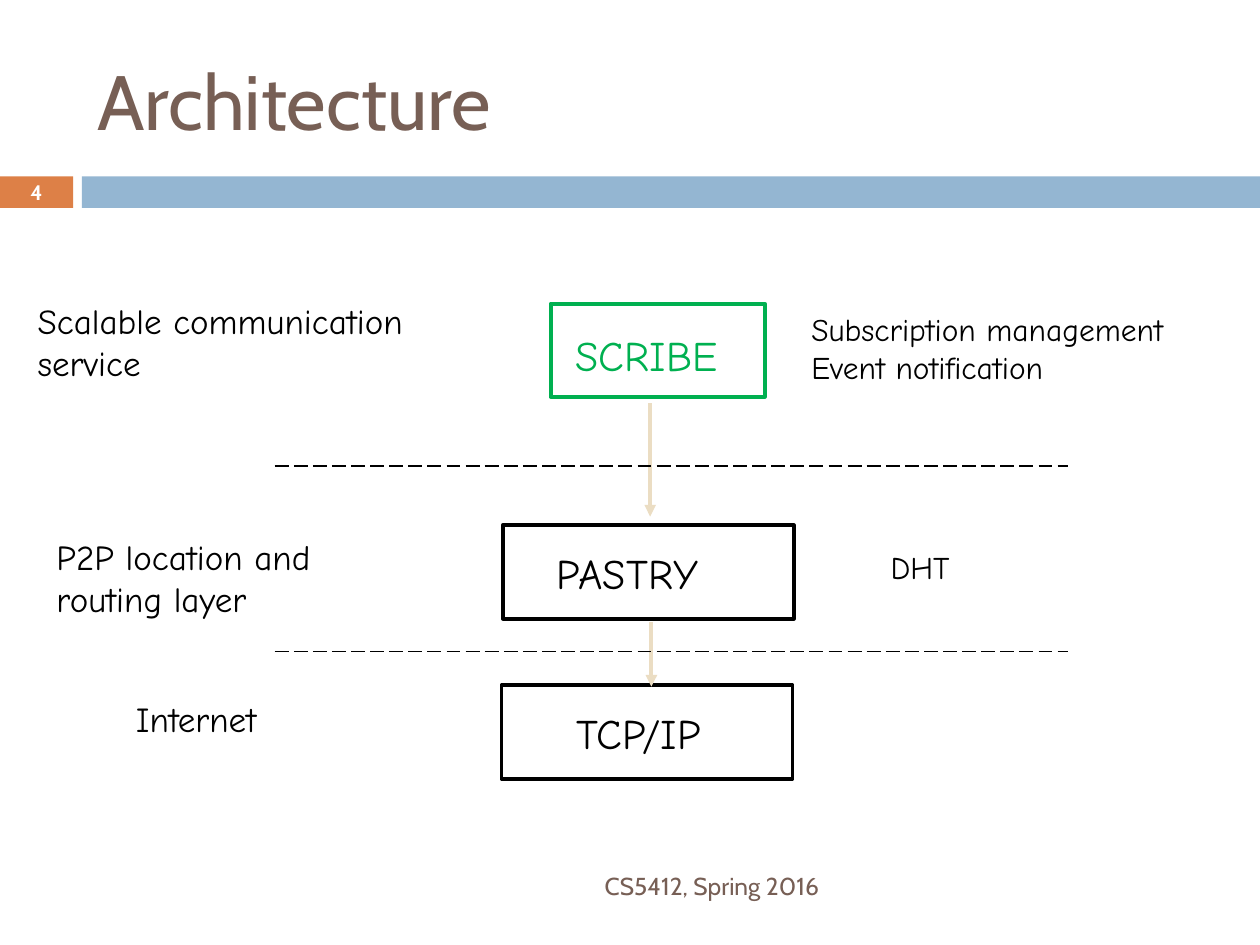
from pptx import Presentation
from pptx.dml.color import RGBColor
from pptx.enum.dml import MSO_LINE
from pptx.enum.shapes import MSO_CONNECTOR, MSO_SHAPE
from pptx.enum.text import MSO_ANCHOR, PP_ALIGN
from pptx.oxml.ns import qn
from pptx.util import Inches, Pt
from lxml.etree import SubElement

THEME = {
    "head": "Cabin", "body": "Comic Neue",
    "brown": "775F55", "orange": "DD8047", "blue": "94B6D2",
    "green": "00B050", "sand": "EBDDC3", "black": "000000", "white": "FFFFFF",
    "title": 44, "layer": 24, "role": 20, "note": 18, "foot": 14, "number": 12,
    "thick": 2.25, "thin": 1,
}

TITLE = ("Architecture", (0.67, 0.25, 8.92, 1.08))
BANDS = [((0, 1.4, 0.58, 0.25), "orange"), ((0.65, 1.4, 9.35, 0.25), "blue")]
NUMBER = ("4", (0, 1.39, 0.58, 0.27))
FOOTER = ("CS5412, Spring 2016", (0.67, 6.83, 5.93, 0.4))
LAYERS = [
    ("SCRIBE", (4.37, 2.41, 1.7, 0.74), (4.47, 2.57, 1.53, 0.5), "green"),
    ("PASTRY", (3.99, 4.17, 2.31, 0.74), (4.32, 4.3, 1.5, 0.5), "black"),
    ("TCP/IP", (3.98, 5.44, 2.31, 0.74), (4.48, 5.57, 1.33, 0.5), "black"),
]
LABELS = [
    ("Scalable communication\nservice", (0.2, 2.33, 3.25, 0.77), "role"),
    ("P2P location and\nrouting layer", (0.35, 4.2, 2.37, 0.77), "role"),
    ("Internet", (0.98, 5.49, 1.34, 0.43), "role"),
    ("Subscription management\nEvent notification", (6.34, 2.41, 3.18, 0.7), "note"),
    ("DHT", (6.97, 4.3, 0.74, 0.4), "note"),
]
ARROWS = [(5.16, 3.2, 5.16, 4.1), (5.17, 4.94, 5.17, 5.45)]
BORDERS = [(2.18, y, 8.48, y) for y in (3.7, 5.17)]


def color(name):
    return RGBColor.from_string(THEME[name])


def inches(place):
    return [Inches(n) for n in place]


def write(shape, text, size, tint="black", font="body", bold=False,
          align=PP_ALIGN.LEFT, anchor=MSO_ANCHOR.TOP):
    frame = shape.text_frame
    frame.text = text
    frame.word_wrap = True
    frame.vertical_anchor = anchor
    for para in frame.paragraphs:
        para.alignment = align
        for run in para.runs:
            run.font.name = THEME[font]
            run.font.size = Pt(THEME[size])
            run.font.bold = bold
            run.font.color.rgb = color(tint)


def label(slide, text, place, size, **style):
    write(slide.shapes.add_textbox(*inches(place)), text, size, **style)


def box(slide, place, fill=None, edge=None):
    shape = slide.shapes.add_shape(MSO_SHAPE.RECTANGLE, *inches(place))
    shape.shadow.inherit = False
    if fill:
        shape.fill.solid()
        shape.fill.fore_color.rgb = color(fill)
    else:
        shape.fill.background()
    if edge:
        shape.line.color.rgb = color(edge)
        shape.line.width = Pt(THEME["thick"])
    else:
        shape.line.fill.background()


def line(slide, ends, tint, width, dash=None, arrow=False):
    link = slide.shapes.add_connector(MSO_CONNECTOR.STRAIGHT, *inches(ends))
    link.line.color.rgb = color(tint)
    link.line.width = Pt(THEME[width])
    if dash:
        link.line.dash_style = dash
    if arrow:
        SubElement(link.line._get_or_add_ln(), qn("a:tailEnd"), type="triangle")
    SubElement(link._element.spPr, qn("a:effectLst"))


def main():
    deck = Presentation()
    deck.slide_width, deck.slide_height = Inches(10), Inches(7.5)
    slide = deck.slides.add_slide(deck.slide_layouts[5])

    for place, fill in BANDS:
        box(slide, place, fill=fill)
    text, place = TITLE
    title = slide.shapes.title
    title.left, title.top, title.width, title.height = inches(place)
    write(title, text, "title", "brown", "head", anchor=MSO_ANCHOR.MIDDLE)
    label(slide, *NUMBER, "number", tint="white", font="head", bold=True,
          align=PP_ALIGN.CENTER, anchor=MSO_ANCHOR.MIDDLE)

    for text, frame, place, tint in LAYERS:
        box(slide, frame, edge=tint)
        label(slide, text, place, "layer", tint=tint)
    for ends in ARROWS:
        line(slide, ends, "sand", "thick", arrow=True)
    for ends in BORDERS:
        line(slide, ends, "black", "thin", dash=MSO_LINE.LONG_DASH)
    for item in LABELS:
        label(slide, *item)
    label(slide, *FOOTER, "foot", tint="brown", font="head",
          align=PP_ALIGN.RIGHT, anchor=MSO_ANCHOR.MIDDLE)

    deck.save("out.pptx")


if __name__ == "__main__":
    main()
